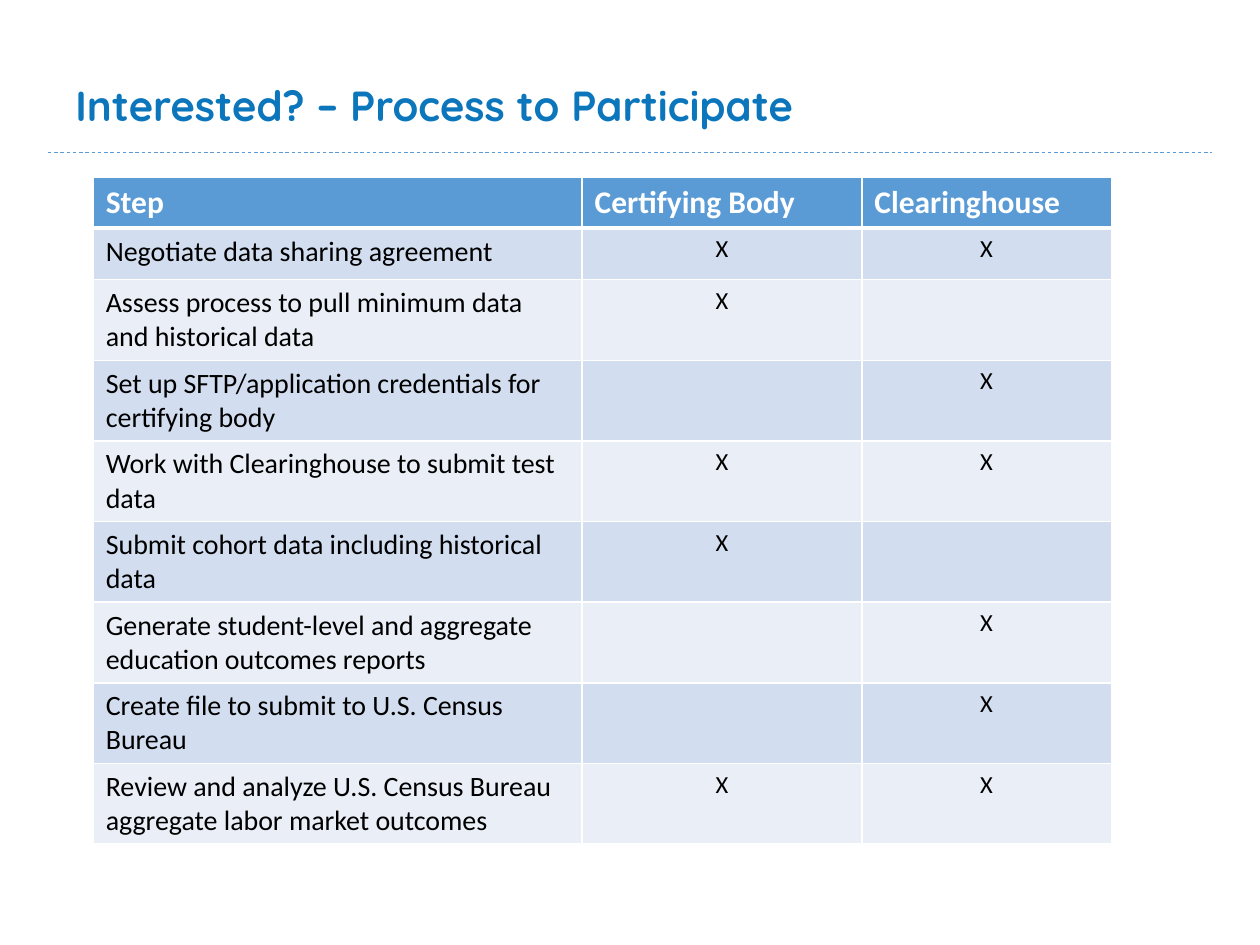
"""Build the slide listing who does each step of the process to participate."""
import pptx
import pptx.dml.color
import pptx.enum.dml
import pptx.enum.shapes
import pptx.enum.text
import pptx.oxml.ns
import pptx.util
from lxml import etree

Inches = pptx.util.Inches
Pt = pptx.util.Pt
qn = pptx.oxml.ns.qn

COLORS = {
    "title": "0C76BC",
    "accent": "5B9BD5",
    "band_dark": "D2DEEF",
    "band_light": "EAEFF7",
    "white": "FFFFFF",
    "black": "000000",
}
HEADERS = ["Step", "Certifying Body", "Clearinghouse"]
STEPS = [
    ("Negotiate data sharing agreement", "X", "X"),
    ("Assess process to pull minimum data and historical data", "X", ""),
    ("Set up SFTP/application credentials for certifying body", "", "X"),
    ("Work with Clearinghouse to submit test data", "X", "X"),
    ("Submit cohort data including historical data", "X", ""),
    ("Generate student-level and aggregate education outcomes reports", "", "X"),
    ("Create file to submit to U.S. Census Bureau", "", "X"),
    ("Review and analyze U.S. Census Bureau aggregate labor market outcomes", "X", "X"),
]
COL_WIDTHS = [3.88, 2.22, 1.98]
ROW_HEIGHTS = [0.4, 0.41] + [0.64] * 7


def rgb(name):
    return pptx.dml.color.RGBColor.from_string(COLORS[name])


def add_run(p, text, font, size, color, bold=False):
    r = p.add_run()
    r.text = text
    r.font.name = font
    r.font.size = Pt(size)
    r.font.bold = bold
    r.font.color.rgb = rgb(color)


def add_title(s, text):
    sp = s.shapes.add_textbox(Inches(0.5), Inches(0.51), Inches(9), Inches(0.7))
    tf = sp.text_frame
    tf.word_wrap = True
    tf.vertical_anchor = pptx.enum.text.MSO_ANCHOR.MIDDLE
    p = tf.paragraphs[0]
    p.line_spacing = 0.9
    add_run(p, text, "Quicksand", 24, "title", bold=True)


def add_rule(s):
    line = s.shapes.add_connector(
        pptx.enum.shapes.MSO_CONNECTOR.STRAIGHT,
        Inches(0.38), Inches(1.21), Inches(9.62), Inches(1.21))
    line.line.color.rgb = rgb("accent")
    line.line.width = Pt(0.5)
    line.line.dash_style = pptx.enum.dml.MSO_LINE.DASH
    etree.SubElement(line._element.spPr, qn("a:effectLst"))


def set_borders(cell, top, bottom):
    tc_pr = cell._tc.get_or_add_tcPr()
    for side, width in (("L", 1), ("R", 1), ("T", top), ("B", bottom)):
        ln = etree.SubElement(tc_pr, qn(f"a:ln{side}"), w=str(Pt(width)))
        fill = etree.SubElement(ln, qn("a:solidFill"))
        etree.SubElement(fill, qn("a:srgbClr"), val=COLORS["white"])


def fill_cell(cell, row, col, text):
    set_borders(cell, 3 if row == 1 else 1, 3 if row == 0 else 1)
    band = "accent" if row == 0 else "band_dark" if row % 2 else "band_light"
    cell.fill.solid()
    cell.fill.fore_color.rgb = rgb(band)
    if not text:
        return
    p = cell.text_frame.paragraphs[0]
    if row == 0:
        add_run(p, text, "Calibri", 18, "white", bold=True)
    elif col == 0:
        add_run(p, text, "Calibri", 16, "black")
    else:
        p.alignment = pptx.enum.text.PP_ALIGN.CENTER
        add_run(p, text, "Calibri", 14, "black")


def add_steps_table(s):
    rows = [HEADERS, *STEPS]
    table = s.shapes.add_table(
        len(rows), len(HEADERS), Inches(0.74), Inches(1.41),
        Inches(sum(COL_WIDTHS)), Inches(sum(ROW_HEIGHTS))).table
    for column, width in zip(table.columns, COL_WIDTHS):
        column.width = Inches(width)
    for i, (values, height) in enumerate(zip(rows, ROW_HEIGHTS)):
        table.rows[i].height = Inches(height)
        for j, text in enumerate(values):
            fill_cell(table.cell(i, j), i, j, text)


def main():
    prs = pptx.Presentation()
    prs.slide_width = Inches(10)
    prs.slide_height = Inches(7.5)
    s = prs.slides.add_slide(prs.slide_layouts[6])
    add_rule(s)
    add_title(s, "Interested? – Process to Participate")
    add_steps_table(s)
    prs.save("out.pptx")


if __name__ == "__main__":
    main()
